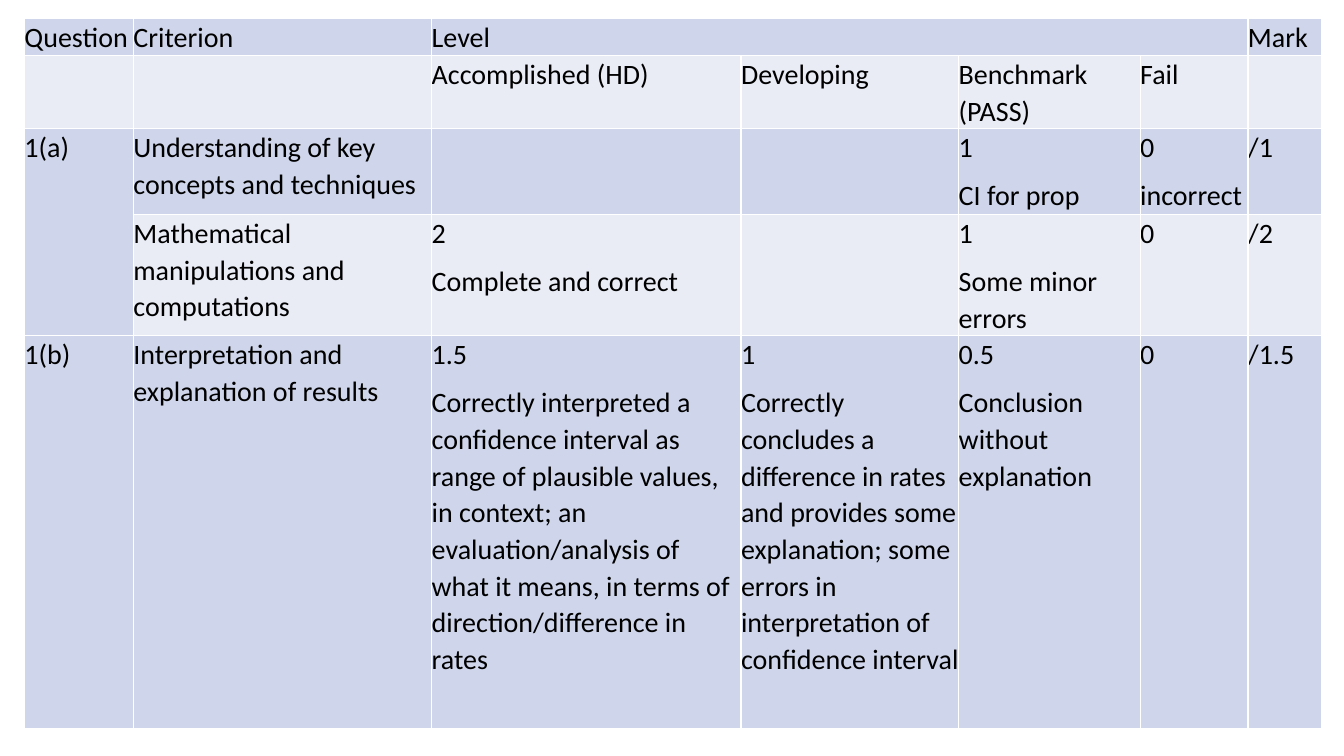
import pptx
import pptx.util
import pptx.dml.color
import pptx.enum.text
import lxml.etree
import pptx.oxml.ns

Pt = pptx.util.Pt
ALIGN = pptx.enum.text.PP_ALIGN
COLORS = {"text": "000000", "border": "FFFFFF", "bands": ("CFD5EA", "E9EBF5")}
COLUMN_WIDTHS = [77.8, 213.1, 221, 155.5, 129.6, 77, 52.6]
ROW_HEIGHTS = [23.8, 36.7, 61.2, 73.4, 280.8]
RUBRIC = [
    ["Question", "Criterion", "Level", "", "", "", "Mark"],
    ["", "", "Accomplished (HD)", "Developing", "Benchmark (PASS)", "Fail", ""],
    ["1(a)", "Understanding of key concepts and techniques", "", "",
     "1\nCI for prop", "0\nincorrect", "/1"],
    ["", "Mathematical manipulations and computations",
     "2\nComplete and correct", "", "1\nSome minor errors", "0", "/2"],
    ["1(b)", "Interpretation and explanation of results",
     "1.5\nCorrectly interpreted a confidence interval as range of plausible "
     "values, in context; an evaluation/analysis of what it means, in terms of "
     "direction/difference in rates",
     "1\nCorrectly concludes a difference in rates and provides some "
     "explanation; some errors in interpretation of confidence interval",
     "0.5\nConclusion without explanation", "0", "/1.5"],
]


def rgb(color):
    return pptx.dml.color.RGBColor.from_string(color)


def add_borders(cell):
    properties = cell._tc.get_or_add_tcPr()
    for side in ("a:lnL", "a:lnR", "a:lnT", "a:lnB"):
        border = lxml.etree.SubElement(
            properties, pptx.oxml.ns.qn(side), w=str(Pt(1)))
        fill = lxml.etree.SubElement(border, pptx.oxml.ns.qn("a:solidFill"))
        lxml.etree.SubElement(
            fill, pptx.oxml.ns.qn("a:srgbClr"), val=COLORS["border"])


def write_cell(cell, text, band, alignment):
    cell.margin_left = cell.margin_right = 0
    cell.margin_top = cell.margin_bottom = 0
    add_borders(cell)
    cell.fill.solid()
    cell.fill.fore_color.rgb = rgb(band)
    if not text:
        return
    cell.text_frame.text = text
    for paragraph in cell.text_frame.paragraphs:
        paragraph.alignment = alignment
        paragraph.line_spacing = 1.07
        paragraph.space_after = Pt(8)
        for run in paragraph.runs:
            run.font.name = "Calibri"
            run.font.size = Pt(20)
            run.font.color.rgb = rgb(COLORS["text"])


def add_rubric(slide):
    rubric = slide.shapes.add_table(
        len(ROW_HEIGHTS), len(COLUMN_WIDTHS), Pt(17.5), Pt(13.4),
        Pt(sum(COLUMN_WIDTHS)), Pt(sum(ROW_HEIGHTS))).table
    rubric.first_row = rubric.horz_banding = False
    for column, width in zip(rubric.columns, COLUMN_WIDTHS):
        column.width = Pt(width)
    for row, height in zip(rubric.rows, ROW_HEIGHTS):
        row.height = Pt(height)
    for r, texts in enumerate(RUBRIC):
        for c, text in enumerate(texts):
            is_heading = r < 2 or c == 0
            write_cell(rubric.cell(r, c), text, COLORS["bands"][r % 2],
                       ALIGN.JUSTIFY if is_heading else ALIGN.LEFT)
    rubric.cell(0, 2).merge(rubric.cell(0, 5))
    rubric.cell(2, 0).merge(rubric.cell(3, 0))


def main():
    presentation = pptx.Presentation()
    presentation.slide_width = Pt(960)
    presentation.slide_height = Pt(540)
    slide = presentation.slides.add_slide(presentation.slide_layouts[6])
    add_rubric(slide)
    presentation.save("out.pptx")


if __name__ == "__main__":
    main()
